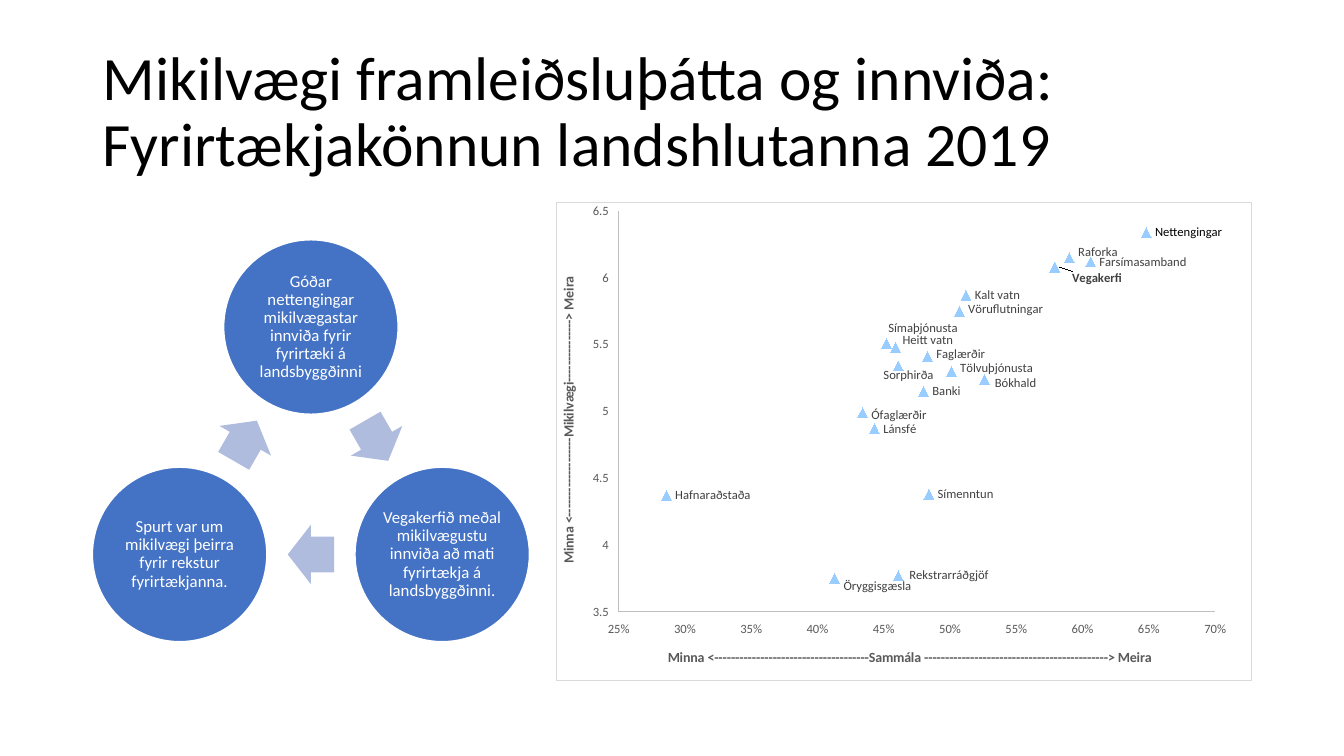
from math import cos, radians, sin

from lxml.etree import fromstring
from pptx import Presentation
from pptx.chart.data import XyChartData
from pptx.dml.color import RGBColor
from pptx.enum.chart import XL_CHART_TYPE as ChartType
from pptx.enum.chart import XL_LABEL_POSITION as LabelPosition
from pptx.enum.chart import XL_MARKER_STYLE as MarkerStyle
from pptx.enum.chart import XL_TICK_LABEL_POSITION as TickPosition
from pptx.enum.chart import XL_TICK_MARK as TickMark
from pptx.enum.shapes import MSO_SHAPE as Shape
from pptx.enum.text import MSO_ANCHOR as Anchor
from pptx.enum.text import MSO_AUTO_SIZE as AutoSize
from pptx.enum.text import PP_ALIGN as Align
from pptx.util import Pt

COLOURS = {
    "black": "000000", "white": "FFFFFF", "circle": "4472C4", "arrow": "B0BCDE",
    "axis": "595959", "axis_line": "BFBFBF", "label": "404040",
    "border": "D9D9D9", "marker": "99CCFF",
}
FONT = "Calibri"
NAMESPACES = (
    'xmlns:c="http://schemas.openxmlformats.org/drawingml/2006/chart" '
    'xmlns:a="http://schemas.openxmlformats.org/drawingml/2006/main"'
)
CHART_LEFT, CHART_TOP, CHART_WIDTH, CHART_HEIGHT = 397.4, 144, 496.8, 342.7
CYCLE_X, CYCLE_Y, CYCLE_RADIUS, CIRCLE_SIZE = 222.1, 341.9, 108.3, 124.6
ARROW_WIDTH, ARROW_HEIGHT = 33.1, 42.5

MESSAGES = [
    "Góðar nettengingar mikilvægastar innviða fyrir fyrirtæki á landsbyggðinni",
    "Vegakerfið meðal mikilvægustu innviða að mati fyrirtækja á landsbyggðinni.",
    "Spurt var um mikilvægi þeirra fyrir rekstur fyrirtækjanna.",
]
FACTORS = [
    ("Banki", 0.48, 5.15, 0, 0),
    ("Bókhald", 0.526, 5.24, 1, 3),
    ("Farsímasamband", 0.606, 6.12, 0, 0),
    ("Hafnaraðstaða", 0.286, 4.37, 0, 0),
    ("Heitt vatn", 0.459, 5.48, -1.5, -5),
    ("Kalt vatn", 0.512, 5.87, 0, 0),
    ("Lánsfé", 0.443, 4.87, 0, 0),
    ("Nettengingar", 0.648, 6.34, 0, 0),
    ("Raforka", 0.59, 6.15, 0, -4),
    ("Rekstrarráðgjöf", 0.461, 3.77, 1.5, 0),
    ("Símenntun", 0.484, 4.38, 0, 0),
    ("Símaþjónusta", 0.452, 5.51, -5, -11),
    ("Sorphirða", 0.461, 5.34, -17, 6.5),
    ("Ófaglærðir", 0.434, 4.99, 0, 1.5),
    ("Faglærðir", 0.483, 5.41, 0, -2),
    ("Tölvuþjónusta", 0.501, 5.3, 0, -2),
    ("Vegakerfi", 0.579, 6.08, 6, 8),
    ("Vöruflutningar", 0.507, 5.75, 0, -1.5),
    ("Öryggisgæsla", 0.413, 3.75, 0, 6),
]


def colour(name):
    return RGBColor.from_string(COLOURS[name])


def style_font(font, size, name, bold=False):
    font.name = FONT
    font.size = Pt(size)
    font.bold = bold
    font.color.rgb = colour(name)


def set_title(page, text):
    box = page.shapes.title
    box.left, box.top, box.width, box.height = Pt(66), Pt(28.8), Pt(828), Pt(104.4)
    frame = box.text_frame
    frame.text = text
    frame.word_wrap = True
    frame.auto_size = AutoSize.NONE
    frame.vertical_anchor = Anchor.MIDDLE
    para = frame.paragraphs[0]
    para.alignment = Align.LEFT
    para.line_spacing = 0.9
    style_font(para.runs[0].font, 44, "black")


def add_centred(page, kind, x, y, width, height, fill):
    box = page.shapes.add_shape(
        kind, Pt(x - width / 2), Pt(y - height / 2), Pt(width), Pt(height))
    box.shadow.inherit = False
    box.fill.solid()
    box.fill.fore_color.rgb = colour(fill)
    return box


def add_circle(page, x, y, text):
    box = add_centred(page, Shape.OVAL, x, y, CIRCLE_SIZE, CIRCLE_SIZE, "circle")
    box.line.color.rgb = colour("white")
    box.line.width = Pt(1)
    frame = box.text_frame
    frame.text = text
    frame.word_wrap = True
    frame.vertical_anchor = Anchor.MIDDLE
    frame.margin_left = frame.margin_right = Pt(1.2)
    frame.margin_top = frame.margin_bottom = Pt(1.2)
    para = frame.paragraphs[0]
    para.alignment = Align.CENTER
    para.line_spacing = 0.9
    style_font(para.runs[0].font, 12, "white")


def add_arrow(page, x, y, rotation):
    box = add_centred(page, Shape.RIGHT_ARROW, x, y, ARROW_WIDTH, ARROW_HEIGHT, "arrow")
    box.line.fill.background()
    box.adjustments[0] = 0.6
    box.adjustments[1] = 0.5
    box.rotation = rotation


def add_cycle(page):
    for step, message in enumerate(MESSAGES):
        angle = radians(120 * step - 90)
        add_circle(page, CYCLE_X + CYCLE_RADIUS * cos(angle),
                   CYCLE_Y + CYCLE_RADIUS * sin(angle), message)
        between = angle + radians(60)
        add_arrow(page, CYCLE_X + CYCLE_RADIUS / 2 * cos(between),
                  CYCLE_Y + CYCLE_RADIUS / 2 * sin(between), 60 + 120 * step)


def format_axis(axis, low, high, unit, number_format, title, rotation):
    axis.minimum_scale, axis.maximum_scale, axis.major_unit = low, high, unit
    axis.has_major_gridlines = False
    axis.major_tick_mark = axis.minor_tick_mark = TickMark.NONE
    axis.tick_label_position = TickPosition.LOW
    axis.tick_labels.number_format = number_format
    axis.tick_labels.number_format_is_linked = False
    style_font(axis.tick_labels.font, 9, "axis")
    axis.format.line.color.rgb = colour("axis_line")
    axis.format.line.width = Pt(0.75)
    frame = axis.axis_title.text_frame
    frame.text = title
    style_font(frame.paragraphs[0].runs[0].font, 10, "axis", True)
    frame._txBody.bodyPr.set("rot", str(rotation * 60000))


def layout_xml(values, inner=False):
    target = '<c:layoutTarget val="inner"/>' if inner else ""
    modes = '<c:xMode val="edge"/><c:yMode val="edge"/>' if inner else ""
    places = "".join(f'<c:{key} val="{value:.4f}"/>' for key, value in values.items())
    return fromstring(f"<c:layout {NAMESPACES}><c:manualLayout>{target}{modes}{places}"
                      "</c:manualLayout></c:layout>")


def label_points(series):
    for index, (name, _, _, shift_x, shift_y) in enumerate(FACTORS):
        label = series.points[index].data_label
        label.text_frame.text = name
        label.position = LabelPosition.RIGHT
        style_font(label.text_frame.paragraphs[0].runs[0].font, 9,
                   "black" if name == "Nettengingar" else "label", name == "Vegakerfi")
        if shift_x or shift_y:
            element = series._element.xpath(f".//c:dLbl[c:idx/@val='{index}']")[0]
            element.insert(1, layout_xml(
                {"x": shift_x / CHART_WIDTH, "y": shift_y / CHART_HEIGHT}))


def frame_chart(chart):
    plot_area = chart._chartSpace.xpath("c:chart/c:plotArea")[0]
    for layout in plot_area.xpath("c:layout"):
        plot_area.remove(layout)
    plot_area.insert(0, layout_xml({"x": 0.089, "y": 0.019, "w": 0.859, "h": 0.837}, True))
    chart._chartSpace.xpath("c:chart")[0].addnext(fromstring(
        f'<c:spPr {NAMESPACES}><a:solidFill><a:srgbClr val="{COLOURS["white"]}"/>'
        f'</a:solidFill><a:ln w="{Pt(0.75)}"><a:solidFill>'
        f'<a:srgbClr val="{COLOURS["border"]}"/></a:solidFill></a:ln></c:spPr>'))


def add_scatter(page):
    data = XyChartData()
    points = data.add_series("Series 1")
    for _, agreement, importance, _, _ in FACTORS:
        points.add_data_point(agreement, importance)
    chart = page.shapes.add_chart(
        ChartType.XY_SCATTER, Pt(CHART_LEFT), Pt(CHART_TOP),
        Pt(CHART_WIDTH), Pt(CHART_HEIGHT), data).chart
    chart.has_legend = False
    chart.has_title = False
    style_font(chart.font, 10, "black")
    chart.plots[0].vary_by_categories = False
    format_axis(chart.category_axis, 0.25, 0.7, 0.05, "0%",
                "Minna <" + "-" * 37 + "Sammála " + "-" * 44 + "> Meira", 0)
    format_axis(chart.value_axis, 3.5, 6.5, 0.5, "General",
                "Minna <" + "-" * 19 + "Mikilvægi" + "-" * 15 + "> Meira", -90)
    series = chart.plots[0].series[0]
    series.smooth = False
    series.format.line.fill.background()
    series.marker.style = MarkerStyle.TRIANGLE
    series.marker.size = 7
    series.marker.format.fill.solid()
    series.marker.format.fill.fore_color.rgb = colour("marker")
    series.marker.format.line.fill.background()
    label_points(series)
    frame_chart(chart)


def main():
    deck = Presentation()
    deck.slide_width, deck.slide_height = Pt(960), Pt(540)
    page = deck.slides.add_slide(deck.slide_layouts[5])
    set_title(page, "Mikilvægi framleiðsluþátta og innviða: Fyrirtækjakönnun landshlutanna 2019")
    add_cycle(page)
    add_scatter(page)
    deck.save("out.pptx")


if __name__ == "__main__":
    main()
